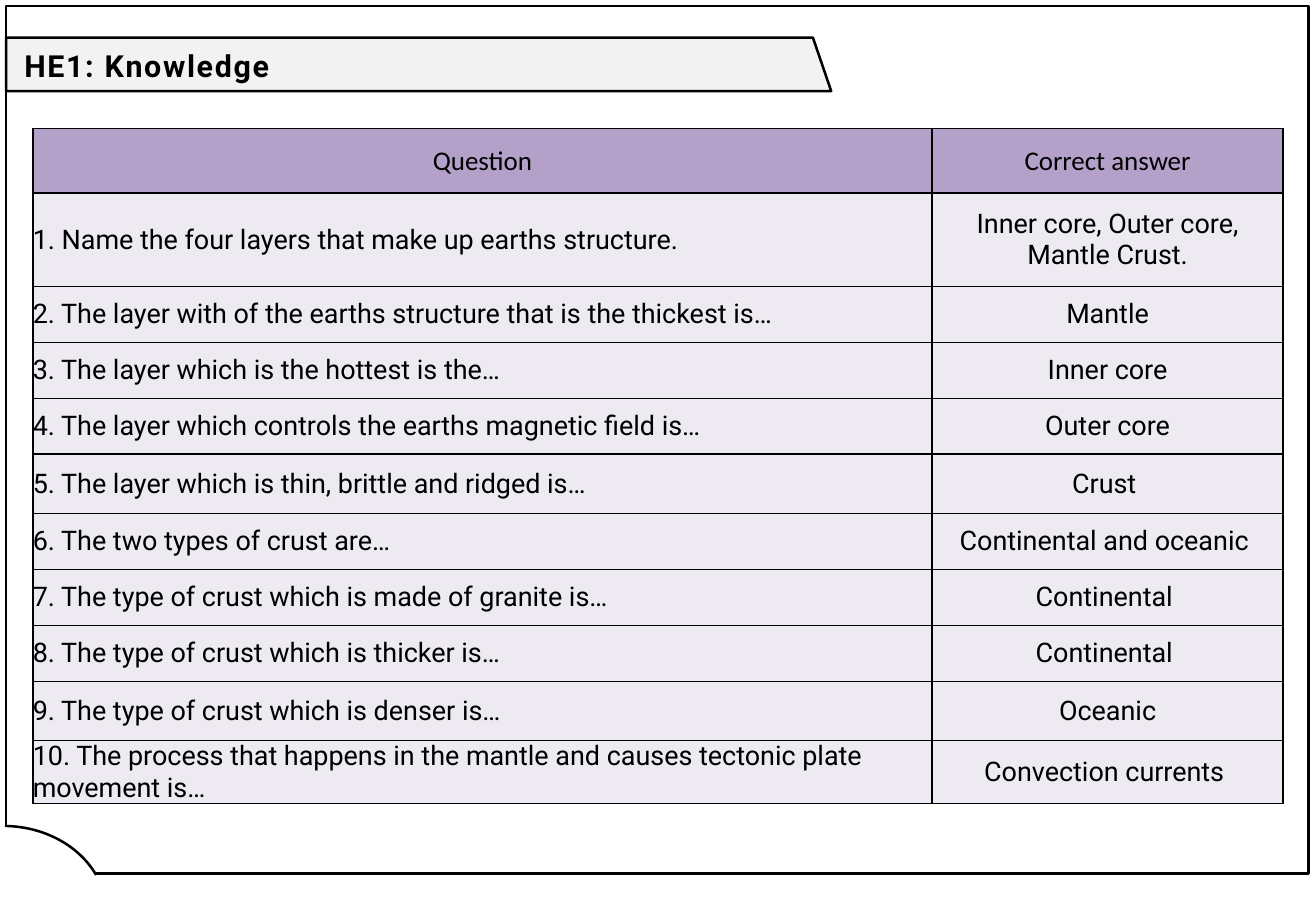
from dataclasses import dataclass

from lxml.etree import SubElement
from pptx import Presentation
from pptx.dml.color import RGBColor
from pptx.enum.shapes import MSO_SHAPE as SHAPE
from pptx.enum.text import MSO_ANCHOR as ANCHOR, MSO_AUTO_SIZE as AUTO, PP_ALIGN as ALIGN
from pptx.oxml.ns import qn
from pptx.util import Inches, Pt

BLACK = RGBColor(0x00, 0x00, 0x00)
WHITE = RGBColor(0xFF, 0xFF, 0xFF)
GREY = RGBColor(0xF2, 0xF2, 0xF2)
PURPLE = RGBColor(0xB4, 0xA1, 0xCA)
LILAC = RGBColor(0xED, 0xEA, 0xF1)

WIDTH, HEIGHT = Inches(10.83), Inches(7.5)
COLS, ROWS = 1083, 750
COL_WIDTHS = (740, 289)


@dataclass(frozen=True)
class Box:
    col: int
    row: int
    cols: int
    rows: int

    def emu(self) -> tuple[int, int, int, int]:
        return x(self.col), y(self.row), x(self.cols), y(self.rows)


@dataclass(frozen=True)
class Panel:
    kind: SHAPE
    box: Box
    fill: RGBColor | None = None
    outlined: bool = True
    adjustments: tuple[float, ...] = ()


@dataclass(frozen=True)
class Entry:
    question: str
    answer: str
    rows: int = 46
    fill: RGBColor = LILAC
    font: str = "Roboto"
    align: ALIGN = ALIGN.LEFT


PANELS = [
    Panel(SHAPE.RECTANGLE, Box(5, 5, 1072, 714)),
    Panel(SHAPE.ARC, Box(-82, 680, 170, 145), WHITE, adjustments=(162.525, 202.265)),
    Panel(SHAPE.RECTANGLE, Box(1, 681, 5, 10), WHITE, outlined=False),
]
BANNER = [(5, 31), (669, 31), (684, 75), (5, 75)]
TITLE_BOX = Box(10, 21, 643, 63)
ENTRIES = [
    Entry("Question", "Correct answer", 53, PURPLE, "Calibri", ALIGN.CENTER),
    Entry("1. Name the four layers that make up earths structure.",
          "Inner core, Outer core, Mantle Crust.", 77),
    Entry("2. The layer with of the earths structure that is the thickest is…", "Mantle"),
    Entry("3. The layer which is the hottest is the…", "Inner core"),
    Entry("4. The layer which controls the earths magnetic field is…", "Outer core"),
    Entry("5. The layer which is thin, brittle and ridged is…", "Crust ", 49),
    Entry("6. The two types of crust are…", "Continental and oceanic "),
    Entry("7. The type of crust which is made of granite is…", "Continental "),
    Entry("8. The type of crust which is thicker is…", "Continental "),
    Entry("9. The type of crust which is denser is…", "Oceanic", 49),
    Entry("10. The process that happens in the mantle and causes tectonic plate movement is…",
          "Convection currents ", 50),
]
TABLE_BOX = Box(27, 106, sum(COL_WIDTHS), sum(e.rows for e in ENTRIES))


def x(cols: int) -> int:
    return round(WIDTH * cols / COLS)


def y(rows: int) -> int:
    return round(HEIGHT * rows / ROWS)


def write(tf, text: str, *, font: str = "Roboto", size: float = 16, bold: bool = False,
          align: ALIGN = ALIGN.LEFT, tracking: float = 0):
    p = tf.paragraphs[0]
    p.alignment = align
    r = p.add_run()
    r.text = text
    r.font.name, r.font.size, r.font.bold = font, Pt(size), bold
    r.font.color.rgb = BLACK
    if tracking:
        r.font._element.set("spc", str(round(tracking * 100)))
    return p


def style(sp, fill: RGBColor | None, outlined: bool = True) -> None:
    sp.shadow.inherit = False
    if fill is None:
        sp.fill.background()
    else:
        sp.fill.solid()
        sp.fill.fore_color.rgb = fill
    if outlined:
        sp.line.color.rgb = BLACK
        sp.line.width = Pt(1.5)
    else:
        sp.line.fill.background()


def draw_banner(s) -> None:
    points = [(x(c), y(r)) for c, r in BANNER]
    builder = s.shapes.build_freeform(*points[0])
    builder.add_line_segments(points[1:], close=True)
    style(builder.convert_to_shape(), GREY)


def draw_panel(s, panel: Panel) -> None:
    sp = s.shapes.add_shape(panel.kind, *panel.box.emu())
    for i, value in enumerate(panel.adjustments):
        sp.adjustments[i] = value
    style(sp, panel.fill, panel.outlined)


def add_borders(cell) -> None:
    tc_pr = cell._tc.get_or_add_tcPr()
    for side in ("a:lnL", "a:lnR", "a:lnT", "a:lnB"):
        ln = SubElement(tc_pr, qn(side), w=str(Pt(1)))
        SubElement(SubElement(ln, qn("a:solidFill")), qn("a:srgbClr"), val=str(BLACK))


def draw_table(s, entries: list[Entry]) -> None:
    table = s.shapes.add_table(len(entries), len(COL_WIDTHS), *TABLE_BOX.emu()).table
    table.horz_banding = False
    for column, cols in zip(table.columns, COL_WIDTHS):
        column.width = x(cols)
    for row, entry in zip(table.rows, entries):
        row.height = y(entry.rows)
        texts = (entry.question, entry.answer)
        for cell, text, align in zip(row.cells, texts, (entry.align, ALIGN.CENTER)):
            cell.margin_left = cell.margin_right = cell.margin_top = cell.margin_bottom = 0
            cell.vertical_anchor = ANCHOR.MIDDLE
            add_borders(cell)
            cell.fill.solid()
            cell.fill.fore_color.rgb = entry.fill
            write(cell.text_frame, text, font=entry.font, align=align)


def draw_title(s, text: str) -> None:
    sp = s.shapes.title
    sp.left, sp.top, sp.width, sp.height = TITLE_BOX.emu()
    tf = sp.text_frame
    tf.word_wrap, tf.auto_size = True, AUTO.NONE
    tf.vertical_anchor = ANCHOR.MIDDLE
    p = write(tf, text, size=18, bold=True, tracking=1)
    p.line_spacing, p.space_before, p.space_after = 1.07, Pt(0), Pt(8)
    sp.element.getparent().append(sp.element)


def main() -> None:
    prs = Presentation()
    prs.slide_width, prs.slide_height = WIDTH, HEIGHT
    s = prs.slides.add_slide(prs.slide_layouts.get_by_name("Title Only"))
    draw_banner(s)
    for panel in PANELS:
        draw_panel(s, panel)
    draw_table(s, ENTRIES)
    draw_title(s, "HE1: Knowledge")
    prs.save("out.pptx")


if __name__ == "__main__":
    main()
